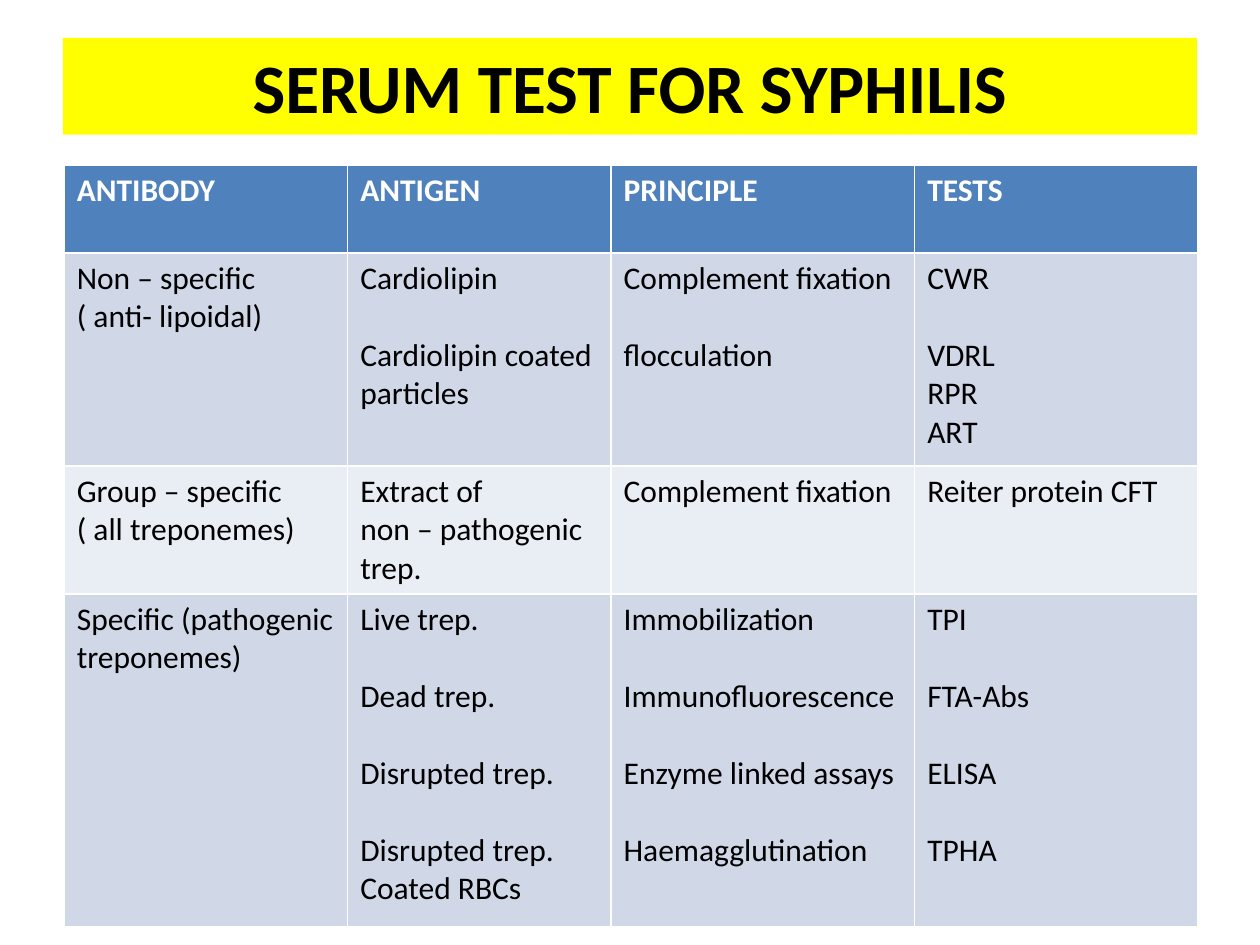
"""Build the slide on serum tests for syphilis: a title banner above a table."""
from dataclasses import dataclass

from pptx import Presentation
from pptx.dml.color import RGBColor
from pptx.enum.shapes import MSO_SHAPE
from pptx.enum.text import MSO_ANCHOR, PP_ALIGN
from pptx.slide import Slide
from pptx.table import _Cell
from pptx.text.text import _Paragraph
from pptx.util import Inches, Pt


@dataclass(frozen=True)
class Theme:
    font: str = "Calibri"
    title_size: float = 39.6
    body_size: float = 18
    block_gap: float = 22
    banner: str = "FFFF00"
    header: str = "4F81BD"
    bands: tuple[str, str] = ("D0D8E8", "E9EDF4")
    dark: str = "000000"
    light: str = "FFFFFF"


@dataclass(frozen=True)
class TestGroup:
    height: float
    antibody: tuple[str, ...]
    antigen: tuple[str, ...]
    principle: tuple[str, ...]
    tests: tuple[str, ...]

    def cells(self) -> tuple[tuple[str, ...], ...]:
        return self.antibody, self.antigen, self.principle, self.tests


THEME = Theme()
COLUMN_WIDTHS = (2.25, 2.09, 2.41, 2.25)
HEADER = TestGroup(0.7, ("ANTIBODY",), ("ANTIGEN",), ("PRINCIPLE",), ("TESTS",))
GROUPS = (
    TestGroup(
        1.69,
        ("Non – specific\n( anti- lipoidal)",),
        ("Cardiolipin", "Cardiolipin coated particles"),
        ("Complement fixation", "flocculation"),
        ("CWR", "VDRL\nRPR\nART"),
    ),
    TestGroup(
        0.99,
        ("Group – specific\n( all treponemes)",),
        ("Extract of\nnon – pathogenic trep.",),
        ("Complement fixation",),
        ("Reiter protein CFT",),
    ),
    TestGroup(
        2.64,
        ("Specific (pathogenic treponemes)",),
        ("Live trep.", "Dead trep.", "Disrupted trep.", "Disrupted trep.\nCoated RBCs"),
        ("Immobilization", "Immunofluorescence", "Enzyme linked assays", "Haemagglutination"),
        ("TPI", "FTA-Abs", "ELISA", "TPHA"),
    ),
)


def write(paragraph: _Paragraph, text: str, size: float, color: str, bold: bool) -> None:
    run = paragraph.add_run()
    run.text = text
    for name, value in {"name": THEME.font, "size": Pt(size), "bold": bold}.items():
        setattr(run.font, name, value)
    run.font.color.rgb = RGBColor.from_string(color)


def add_title(slide: Slide, text: str) -> None:
    banner = slide.shapes.add_shape(
        MSO_SHAPE.RECTANGLE, Inches(0.5), Inches(0.3), Inches(9), Inches(0.77)
    )
    banner.shadow.inherit = False
    banner.fill.solid()
    banner.fill.fore_color.rgb = RGBColor.from_string(THEME.banner)
    banner.line.fill.background()
    banner.text_frame.vertical_anchor = MSO_ANCHOR.MIDDLE
    paragraph = banner.text_frame.paragraphs[0]
    paragraph.alignment = PP_ALIGN.CENTER
    write(paragraph, text, THEME.title_size, THEME.dark, True)


def fill_cell(cell: _Cell, blocks: tuple[str, ...], fill: str, color: str, bold: bool) -> None:
    cell.fill.solid()
    cell.fill.fore_color.rgb = RGBColor.from_string(fill)
    frame = cell.text_frame
    for block_index, block in enumerate(blocks):
        for line_index, line in enumerate(block.split("\n")):
            first = block_index == line_index == 0
            paragraph = frame.paragraphs[0] if first else frame.add_paragraph()
            if block_index and not line_index:
                paragraph.space_before = Pt(THEME.block_gap)
            write(paragraph, line, THEME.body_size, color, bold)


def add_test_table(slide: Slide) -> None:
    groups = (HEADER, *GROUPS)
    table = slide.shapes.add_table(
        len(groups), len(COLUMN_WIDTHS), Inches(0.51), Inches(1.31),
        Inches(sum(COLUMN_WIDTHS)), Inches(sum(group.height for group in groups)),
    ).table
    for column, width in zip(table.columns, COLUMN_WIDTHS):
        column.width = Inches(width)
    for index, (row, group) in enumerate(zip(table.rows, groups)):
        row.height = Inches(group.height)
        is_header = index == 0
        fill = THEME.header if is_header else THEME.bands[(index - 1) % 2]
        color = THEME.light if is_header else THEME.dark
        for cell, blocks in zip(row.cells, group.cells()):
            fill_cell(cell, blocks, fill, color, is_header)


def main() -> None:
    presentation = Presentation()
    presentation.slide_width = Inches(10)
    presentation.slide_height = Inches(7.5)
    slide = presentation.slides.add_slide(presentation.slide_layouts[6])
    add_title(slide, "SERUM TEST FOR SYPHILIS")
    add_test_table(slide)
    presentation.save("out.pptx")


if __name__ == "__main__":
    main()
